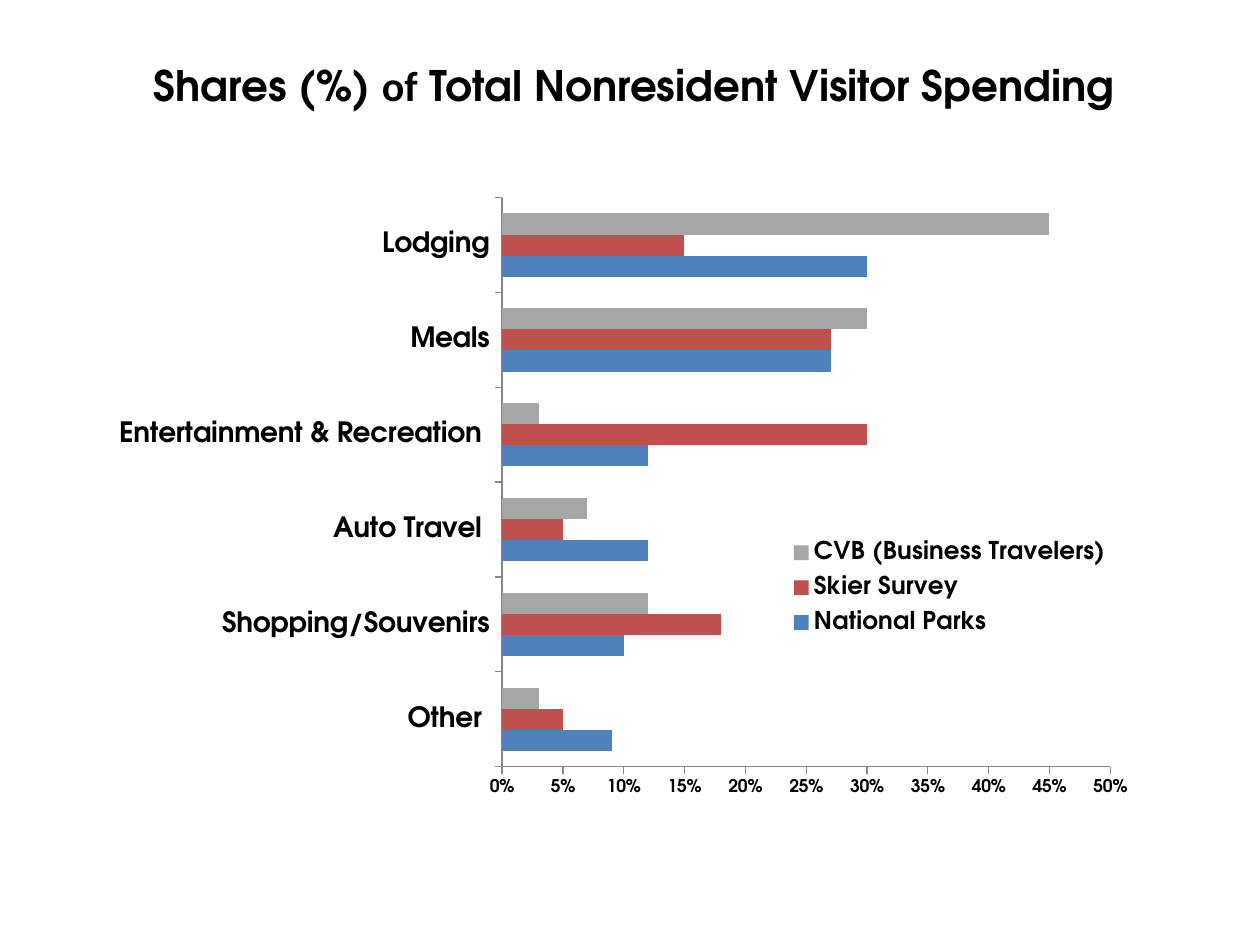
from dataclasses import dataclass

from lxml.etree import SubElement
from pptx import Presentation
from pptx.chart.data import CategoryChartData
from pptx.dml.color import RGBColor
from pptx.enum.chart import XL_CHART_TYPE as ChartType
from pptx.enum.chart import XL_LEGEND_POSITION as LegendPosition
from pptx.enum.chart import XL_TICK_MARK as TickMark
from pptx.enum.text import MSO_ANCHOR as Anchor
from pptx.enum.text import PP_ALIGN as Align
from pptx.oxml.ns import qn
from pptx.util import Cm, Pt

COLORS = {
    "text": "000000",
    "axis": "868686",
    "blue": "4F81BD",
    "red": "C0504D",
    "gray": "A6A6A6",
}
HEADING_FONT = "TeX Gyre Adventor"
BODY_FONT = "Calibri"


@dataclass
class SpendingSeries:
    name: str
    shares: list[float]
    color: str


CATEGORIES = ["Other ", "Shopping/Souvenirs", "Auto Travel ",
              "Entertainment & Recreation ", "Meals", "Lodging"]
SERIES = [
    SpendingSeries("National Parks", [0.09, 0.10, 0.12, 0.12, 0.27, 0.30], "blue"),
    SpendingSeries("Skier Survey", [0.05, 0.18, 0.05, 0.30, 0.27, 0.15], "red"),
    SpendingSeries("CVB (Business Travelers)",
                   [0.03, 0.12, 0.07, 0.03, 0.30, 0.45], "gray"),
]


def rgb(name: str) -> RGBColor:
    return RGBColor.from_string(COLORS[name])


def format_font(font, size: float, name: str = HEADING_FONT, bold: bool = True,
                color: str = "text") -> None:
    font.size = Pt(size)
    font.name = name
    font.bold = bold
    font.color.rgb = rgb(color)


def add_run(paragraph, text: str, **font_format) -> None:
    run = paragraph.add_run()
    run.text = text
    format_font(run.font, **font_format)


def add_title(slide) -> None:
    title = slide.shapes.title
    title.left, title.top, title.width, title.height = (
        Cm(2.74), Cm(1.07), Cm(20.32), Cm(1.27))
    title.text_frame.word_wrap = True
    title.text_frame.vertical_anchor = Anchor.MIDDLE
    paragraph = title.text_frame.paragraphs[0]
    paragraph.alignment = Align.CENTER
    add_run(paragraph, "Shares (%) ", size=24)
    add_run(paragraph, "of", size=24, name=BODY_FONT)
    add_run(paragraph, " Total Nonresident Visitor Spending ", size=24)


def set_layout(element, x: float, y: float, width: float, height: float,
               inner: bool = False) -> None:
    """Place a plot area or legend at fractions of the chart's size."""
    for old_layout in element.findall(qn("c:layout")):
        element.remove(old_layout)
    layout = SubElement(element, qn("c:layout"))
    position = 1 if element.find(qn("c:legendPos")) is not None else 0
    element.insert(position, layout)
    manual = SubElement(layout, qn("c:manualLayout"))
    settings = [("layoutTarget", "inner")] if inner else []
    settings += [("xMode", "edge"), ("yMode", "edge"),
                 ("x", x), ("y", y), ("w", width), ("h", height)]
    for tag, value in settings:
        SubElement(manual, qn(f"c:{tag}")).set("val", str(value))


def format_axis(axis, size: float) -> None:
    axis.has_major_gridlines = False
    axis.major_tick_mark = TickMark.OUTSIDE
    axis.minor_tick_mark = TickMark.NONE
    axis.format.line.color.rgb = rgb("axis")
    axis.format.line.width = Pt(0.75)
    format_font(axis.tick_labels.font, size)


def add_spending_chart(slide) -> None:
    data = CategoryChartData(number_format="0%")
    data.categories = CATEGORIES
    for series in SERIES:
        data.add_series(series.name, series.shares)
    chart = slide.shapes.add_chart(
        ChartType.BAR_CLUSTERED, Cm(2.34), Cm(3.38), Cm(20.75), Cm(13.77), data).chart
    format_font(chart.font, 10, name=BODY_FONT, bold=False)
    chart.has_title = False

    plot = chart.plots[0]
    plot.gap_width = 150
    plot.overlap = 0
    plot.vary_by_categories = False
    for drawn, series in zip(plot.series, SERIES):
        drawn.format.fill.solid()
        drawn.format.fill.fore_color.rgb = rgb(series.color)

    format_axis(chart.category_axis, 16)
    shares = chart.value_axis
    format_axis(shares, 10)
    shares.minimum_scale, shares.maximum_scale, shares.major_unit = 0, 0.5, 0.05
    shares.tick_labels.number_format = "0%"
    shares.tick_labels.number_format_is_linked = False

    chart.has_legend = True
    chart.legend.position = LegendPosition.RIGHT
    chart.legend.include_in_layout = False
    format_font(chart.legend.font, 14)
    plot_area = chart.element.find(qn("c:chart")).find(qn("c:plotArea"))
    set_layout(plot_area, 0.375, 0.044, 0.591, 0.833, inner=True)
    set_layout(chart.element.find(qn("c:chart")).find(qn("c:legend")),
               0.65, 0.53, 0.32, 0.17)


def main() -> None:
    presentation = Presentation()
    presentation.slide_width, presentation.slide_height = Cm(25.4), Cm(19.05)
    slide = presentation.slides.add_slide(
        presentation.slide_layouts.get_by_name("Title Only"))
    add_title(slide)
    add_spending_chart(slide)
    presentation.save("out.pptx")


if __name__ == "__main__":
    main()
